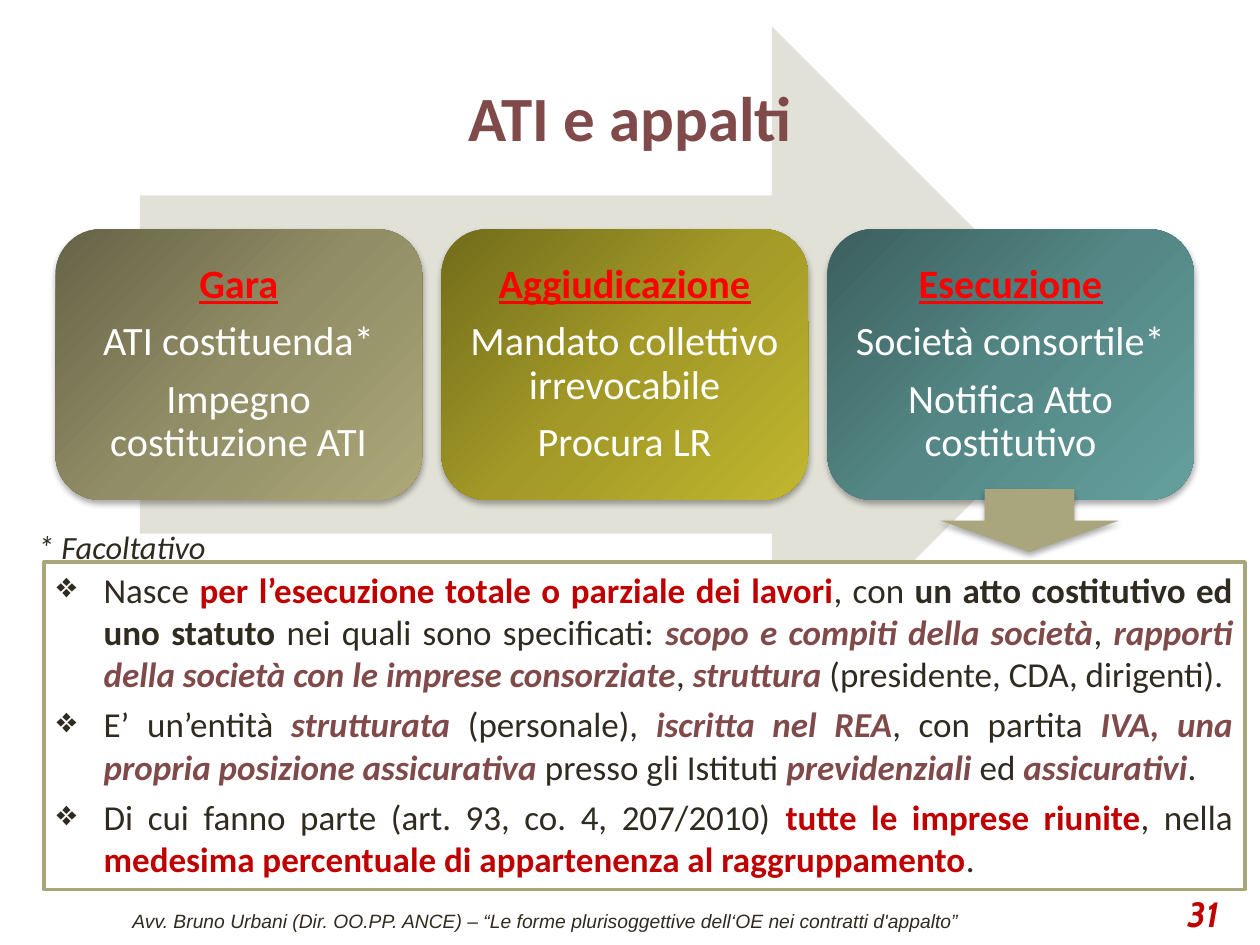
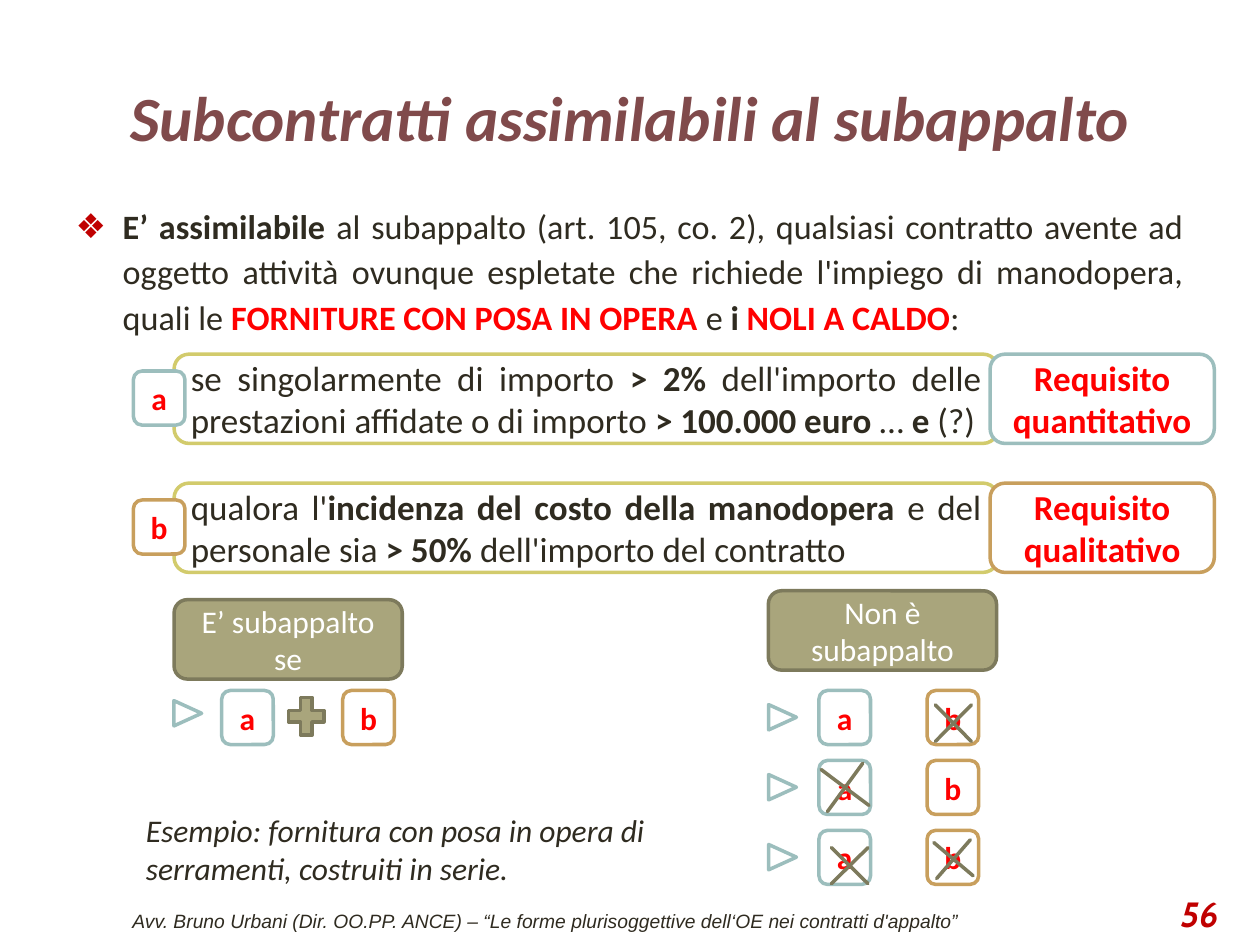
from copy import deepcopy

from lxml.etree import SubElement
from pptx import Presentation
from pptx.dml.color import RGBColor
from pptx.enum.shapes import MSO_SHAPE
from pptx.enum.text import MSO_ANCHOR, MSO_AUTO_SIZE, PP_ALIGN
from pptx.oxml.ns import qn
from pptx.util import Cm, Pt

WHITE = RGBColor(0xFF, 0xFF, 0xFF)
DARK = RGBColor(0x2F, 0x2B, 0x20)
RED = RGBColor(0xFF, 0x00, 0x00)
CRIMSON = RGBColor(0xC0, 0x00, 0x00)
MAROON = RGBColor(0x80, 0x4A, 0x4B)
SAND = RGBColor(0xA9, 0xA5, 0x7C)
PALE_SAND = RGBColor(0xE2, 0xE1, 0xD7)
DEEP_SAND = RGBColor(0x7D, 0x7A, 0x5C)
YELLOW = RGBColor(0xD2, 0xCB, 0x6C)
TEAL = RGBColor(0x9C, 0xBE, 0xBD)
OCHRE = RGBColor(0xC8, 0x9F, 0x5D)
SAND_SHADES = [RGBColor(0x66, 0x63, 0x47), RGBColor(0x91, 0x8D, 0x66), RGBColor(0xAC, 0xA8, 0x79)]
OLIVE_SHADES = [RGBColor(0x72, 0x6C, 0x1B), RGBColor(0xA2, 0x99, 0x27), RGBColor(0xC0, 0xB6, 0x2E)]
TEAL_SHADES = [RGBColor(0x3B, 0x5F, 0x5E), RGBColor(0x54, 0x87, 0x85), RGBColor(0x64, 0xA0, 0x9E)]

PLAIN = {"name": "Calibri", "size": Pt(20), "bold": False, "italic": False, "rgb": DARK}
BOLD = PLAIN | {"bold": True}
ITALIC = PLAIN | {"italic": True, "size": Pt(18)}
KEY = BOLD | {"rgb": CRIMSON}
TERM = BOLD | {"rgb": MAROON, "italic": True}
ALERT = BOLD | {"rgb": RED}
LETTER = ALERT | {"size": Pt(18)}
LABEL = PLAIN | {"rgb": WHITE, "size": Pt(18)}
CARD_TEXT = LABEL | {"size": Pt(23)}
CARD_TITLE = ALERT | {"size": Pt(23), "underline": True}
TITLE = BOLD | {"rgb": MAROON, "size": Pt(36)}
FOOTER = ITALIC | {"name": "Arial", "size": Pt(11)}
NUMBER = KEY | {"name": "Cabin", "italic": True}

FOOTER_TEXT = "Avv. Bruno Urbani (Dir. OO.PP. ANCE) – “Le forme plurisoggettive dell‘OE nei contratti d'appalto”"


class Deck:
    def __init__(self):
        self.presentation = Presentation()
        self.presentation.slide_width = Cm(25.4)
        self.presentation.slide_height = Cm(19.05)
        self.slide = None

    def new_slide(self, number):
        self.slide = self.presentation.slides.add_slide(self.presentation.slide_layouts[1])
        self.text_box((1.3, 18.21, 19.41, 0.74), [[(FOOTER_TEXT, FOOTER)]], align=PP_ALIGN.CENTER)
        self.text_box((18.9, 17.91, 5.92, 1.02), [[(number, NUMBER)]],
                      align=PP_ALIGN.RIGHT, anchor=MSO_ANCHOR.MIDDLE)

    def set_text(self, shape, paragraphs, align=PP_ALIGN.CENTER, anchor=MSO_ANCHOR.MIDDLE,
                 gap=0, spacing=1, bullet=None):
        frame = shape.text_frame
        frame.word_wrap = True
        frame.auto_size = MSO_AUTO_SIZE.NONE
        frame.vertical_anchor = anchor
        for index, runs in enumerate(paragraphs):
            paragraph = frame.add_paragraph() if index else frame.paragraphs[0]
            self.set_bullet(paragraph, bullet)
            formats = {"alignment": align, "line_spacing": spacing,
                       "space_before": Pt(gap if index else 0), "space_after": Pt(0)}
            for name, value in formats.items():
                setattr(paragraph, name, value)
            for text, style in runs:
                run = paragraph.add_run()
                run.text = text
                for name, value in style.items():
                    setattr(run.font.color if name == "rgb" else run.font, name, value)

    def set_bullet(self, paragraph, color):
        properties = paragraph._p.get_or_add_pPr()
        indent = Cm(0.95) if color else 0
        properties.set("marL", str(indent))
        properties.set("indent", str(-indent))
        if color:
            bullet_color = SubElement(properties, qn("a:buClr"))
            SubElement(bullet_color, qn("a:srgbClr"), val=str(color))
            SubElement(properties, qn("a:buChar"), char="❖")
        else:
            SubElement(properties, qn("a:buNone"))

    def place(self, placeholder, box):
        for name, value in zip(("left", "top", "width", "height"), box):
            setattr(placeholder, name, Cm(value))
        self.slide.shapes._spTree.append(placeholder._element)

    def title(self, text, style=TITLE):
        title = self.slide.shapes.title
        self.place(title, (1.27, 0.76, 22.86, 3.18))
        self.set_text(title, [[(text, style)]])

    def body(self, box, paragraphs, **layout):
        body = self.slide.placeholders[1]
        self.place(body, box)
        self.set_text(body, paragraphs, PP_ALIGN.JUSTIFY, MSO_ANCHOR.TOP, **layout)

    def text_box(self, box, paragraphs, align=PP_ALIGN.LEFT, anchor=MSO_ANCHOR.TOP):
        shape = self.slide.shapes.add_textbox(*map(Cm, box))
        self.set_text(shape, paragraphs, align, anchor)

    def shape(self, kind, box, fill=WHITE, line=None, rotation=0):
        shape = self.slide.shapes.add_shape(kind, *map(Cm, box))
        shape.shadow.inherit = False
        shape.rotation = rotation
        shape.fill.solid()
        shape.fill.fore_color.rgb = fill
        if line:
            shape.line.color.rgb = line
            shape.line.width = Pt(2)
        else:
            shape.line.fill.background()
        return shape

    def panel(self, box, runs, line, fill=WHITE, align=PP_ALIGN.CENTER):
        shape = self.shape(MSO_SHAPE.ROUNDED_RECTANGLE, box, fill, line)
        self.set_text(shape, [runs], align)

    def drop_shadow(self, shape):
        effects = shape._element.spPr.find(qn("a:effectLst"))
        shadow = SubElement(effects, qn("a:outerShdw"), blurRad=str(Pt(3.5)),
                            dist=str(Pt(2.2)), dir="5400000", rotWithShape="0")
        color = SubElement(shadow, qn("a:srgbClr"), val="000000")
        SubElement(color, qn("a:alpha"), val="32000")

    def card(self, box, shades, heading, lines):
        shape = self.shape(MSO_SHAPE.ROUNDED_RECTANGLE, box)
        shape.fill.gradient()
        shape.fill.gradient_angle = 315
        stops = shape._element.spPr.find(".//" + qn("a:gsLst"))
        stops.insert(1, deepcopy(stops[0]))
        for index, (stop, shade) in enumerate(zip(shape.fill.gradient_stops, shades)):
            stop.position = index / 2
            stop.color.rgb = shade
        self.drop_shadow(shape)
        paragraphs = [[(heading, CARD_TITLE)]] + [[(line, CARD_TEXT)] for line in lines]
        self.set_text(shape, paragraphs, gap=8, spacing=0.9)

    def tile(self, letter, left, top):
        line = {"a": TEAL, "b": OCHRE}[letter]
        self.panel((left, top, 1.04, 1.09), [(letter, LETTER)], line)

    def marker(self, left, top):
        self.shape(MSO_SHAPE.ISOSCELES_TRIANGLE, (left, top, 0.51, 0.56), line=TEAL, rotation=90)

    def cross(self, box, rotation):
        shape = self.shape(MSO_SHAPE.MATH_MULTIPLY, box, SAND, DEEP_SAND, rotation)
        shape.adjustments[0] = 0


def phases_slide(deck):
    deck.new_slide("31")
    deck.shape(MSO_SHAPE.RIGHT_ARROW, (2.82, 0.53, 19.56, 13.64), PALE_SAND)
    phases = [
        (SAND_SHADES, "Gara", ["ATI costituenda*", "Impegno costituzione ATI"]),
        (OLIVE_SHADES, "Aggiudicazione", ["Mandato collettivo irrevocabile", "Procura LR"]),
        (TEAL_SHADES, "Esecuzione", ["Società consortile*", "Notifica Atto costitutivo"]),
    ]
    for index, phase in enumerate(phases):
        deck.card((1.12 + 7.78 * index, 4.62, 7.39, 5.46), *phase)
    deck.title("ATI e appalti")
    deck.body((0.51, 10.49, 18.64, 0.99), [[("* Facoltativo", ITALIC | {"size": Pt(18.5)})]])
    arrow = deck.shape(MSO_SHAPE.DOWN_ARROW, (18.95, 9.86, 3.61, 1.27), SAND)
    deck.drop_shadow(arrow)
    company = deck.shape(MSO_SHAPE.RECTANGLE, (0.89, 11.33, 24.21, 6.6), line=SAND)
    deck.set_text(company, [
        [("Nasce ", PLAIN), ("per l’esecuzione totale o parziale dei lavori", KEY),
         (", con ", PLAIN), ("un atto costitutivo ed uno statuto ", BOLD),
         ("nei quali sono specificati: ", PLAIN), ("scopo e compiti della società", TERM),
         (", ", PLAIN), ("rapporti della società con le imprese consorziate", TERM),
         (", ", PLAIN), ("struttura ", TERM), ("(presidente, CDA, dirigenti).", PLAIN)],
        [("E’ un’entità ", PLAIN), ("strutturata ", TERM), ("(personale), ", PLAIN),
         ("iscritta nel REA", TERM), (", con partita ", PLAIN),
         ("IVA, una propria posizione assicurativa", TERM), (" presso gli Istituti ", PLAIN),
         ("previdenziali ", TERM), ("ed ", PLAIN), ("assicurativi", TERM), (".", PLAIN)],
        [("Di cui fanno parte (art. 93, co. 4, 207/2010) ", PLAIN),
         ("tutte le imprese riunite", KEY), (", nella ", PLAIN),
         ("medesima percentuale di appartenenza al raggruppamento", KEY), (".", PLAIN)],
    ], PP_ALIGN.JUSTIFY, MSO_ANCHOR.TOP, gap=5, bullet=DARK)


def subcontracts_slide(deck):
    deck.new_slide("56")
    deck.title("Subcontratti assimilabili al subappalto", TITLE | {"italic": True})
    size = {"size": Pt(19.5)}
    deck.body((1.27, 3.94, 22.86, 3.2), [[
        ("E’ assimilabile ", BOLD | size),
        ("al subappalto (art. 105, co. 2), qualsiasi contratto avente ad oggetto attività "
         "ovunque espletate che richiede l'impiego di manodopera, quali le ", PLAIN | size),
        ("FORNITURE CON POSA IN OPERA ", ALERT | size), ("e ", PLAIN | size),
        ("i ", BOLD | size), ("NOLI A CALDO", ALERT | size), (":", PLAIN | size),
    ]], spacing=1.1, bullet=CRIMSON)

    requirements = [
        ("a", TEAL, "Requisito quantitativo",
         [("se singolarmente di importo ", PLAIN), ("> 2% ", BOLD),
          ("dell'importo delle prestazioni affidate o di importo ", PLAIN),
          ("> 100.000 euro", BOLD), (" … ", PLAIN), ("e ", BOLD), ("(?)", PLAIN)]),
        ("b", OCHRE, "Requisito qualitativo",
         [("qualora l'", PLAIN), ("incidenza del costo della manodopera ", BOLD),
          ("e del personale sia ", PLAIN), ("> 50%", BOLD),
          (" dell'importo del contratto", PLAIN)]),
    ]
    for index, (letter, color, name, rule) in enumerate(requirements):
        top = 7.14 + 2.6 * index
        deck.panel((3.51, top, 16.61, 1.8), rule, YELLOW, align=PP_ALIGN.JUSTIFY)
        deck.panel((19.96, top, 4.52, 1.8), [(name, ALERT)], color)
        deck.tile(letter, 2.69, top + 0.34)

    for left, top, verdict in [(3.51, 12.09, "E’ subappalto se"), (15.49, 11.91, "Non è subappalto")]:
        deck.panel((left, top, 4.6, 1.6), [(verdict, LABEL)], DEEP_SAND, SAND)

    first_row = 13.92
    deck.marker(3.53, first_row + 0.18)
    deck.tile("a", 4.47, first_row)
    deck.shape(MSO_SHAPE.MATH_PLUS, (5.69, first_row, 0.97, 1.04), SAND, DEEP_SAND)
    deck.tile("b", 6.91, first_row)
    for index in range(3):
        top = first_row + 1.41 * index
        deck.marker(15.52, top + 0.26)
        deck.tile("a", 16.51, top)
        deck.tile("b", 18.69, top)
    deck.cross((18.52, 13.87, 1.4, 1.42), 0)
    deck.cross((16.21, 15.06, 1.65, 1.63), 81.5)
    deck.cross((18.52, 16.61, 1.4, 1.42), 85.6)
    deck.cross((16.43, 16.74, 1.4, 1.42), 270)
    deck.text_box((2.69, 16.23, 12.09, 1.8), [[
        ("Esempio: fornitura con posa in opera di serramenti, costruiti in serie.", ITALIC)]])


def main():
    deck = Deck()
    phases_slide(deck)
    subcontracts_slide(deck)
    deck.presentation.save("out.pptx")


if __name__ == "__main__":
    main()
